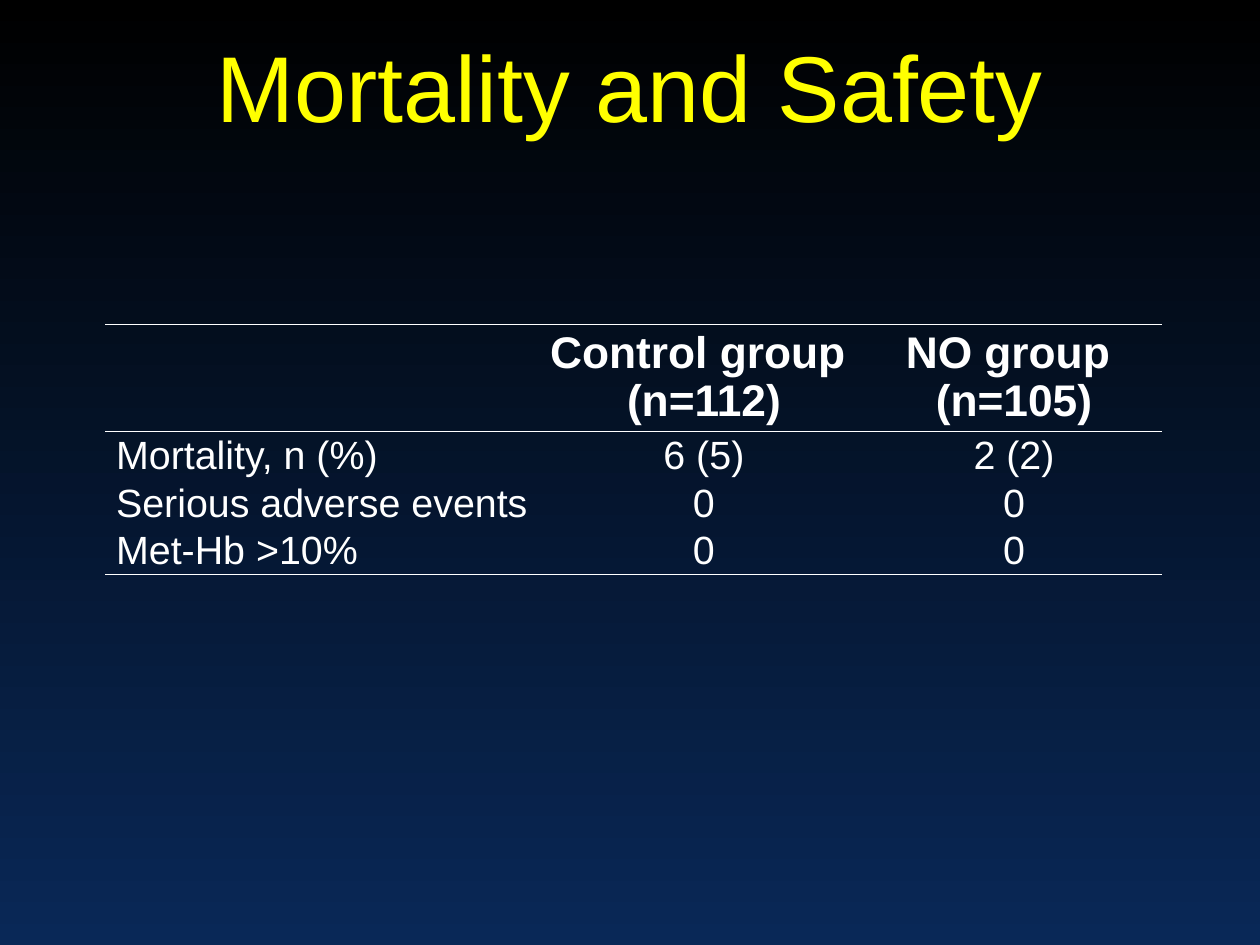
from dataclasses import dataclass

from lxml import etree
from pptx import Presentation
from pptx.dml.color import RGBColor as RGB
from pptx.enum.text import MSO_ANCHOR as ANCHOR, MSO_AUTO_SIZE as AUTO_SIZE, PP_ALIGN as ALIGN
from pptx.oxml.ns import qn
from pptx.util import Inches, Pt


@dataclass(frozen=True)
class Theme:
    """Colours, font and type sizes of the slide."""
    font: str = "Arial"
    top: str = "000000"
    bottom: str = "092857"
    title: str = "FFFF00"
    text: str = "FFFFFF"
    title_size: int = 76
    head_size: int = 36
    body_size: int = 32
    rule_width: int = 1
    line_spacing: float = 0.96


THEME = Theme()
COL_WIDTHS = [4.92, 3.67, 3.33]
HEAD_HEIGHT, ROW_HEIGHT = 1.21, 0.54
ROWS = [
    ["", "Control group \n(n=112)", "NO group \n(n=105)"],
    ["Mortality, n (%)", "6 (5)", "2 (2)"],
    ["Serious adverse events", "0", "0"],
    ["Met-Hb >10%", "0", "0"],
]


def format_text(tf, size, color, bold=False, align=ALIGN.CENTER, spacing=None):
    """Format every paragraph and run of a text frame."""
    for p in tf.paragraphs:
        p.alignment = align
        p.line_spacing = spacing
        for r in p.runs:
            r.font.name = THEME.font
            r.font.size = Pt(size)
            r.font.bold = bold
            r.font.color.rgb = RGB.from_string(color)


def set_background(s):
    """Fill the slide with a vertical gradient."""
    fill = s.background.fill
    fill.gradient()
    fill.gradient_angle = 270
    for stop, color in zip(fill.gradient_stops, (THEME.top, THEME.bottom)):
        stop.color.rgb = RGB.from_string(color)


def set_title(s, text):
    """Place and format the title placeholder."""
    sp = s.shapes.title
    sp.left, sp.top, sp.width, sp.height = Inches(0), Inches(0.21), Inches(14.22), Inches(1.62)
    tf = sp.text_frame
    tf.text = text
    tf.auto_size = AUTO_SIZE.NONE
    tf.vertical_anchor = ANCHOR.MIDDLE
    format_text(tf, THEME.title_size, THEME.title, spacing=THEME.line_spacing)


def set_borders(cell, ruled):
    """Draw the ruled sides of a cell and clear the others."""
    tc_pr = cell._tc.get_or_add_tcPr()
    for i, side in enumerate(("lnL", "lnR", "lnT", "lnB")):
        ln = etree.Element(qn(f"a:{side}"), w=str(Pt(THEME.rule_width)))
        if side in ruled:
            fill = etree.SubElement(ln, qn("a:solidFill"))
            etree.SubElement(fill, qn("a:srgbClr"), val=THEME.text)
        else:
            etree.SubElement(ln, qn("a:noFill"))
        tc_pr.insert(i, ln)


def fill_cell(cell, text, row, col):
    """Write one table cell with its margins, type and rules."""
    head, label = row == 0, col == 0
    cell.text = text
    cell.fill.background()
    cell.vertical_anchor = ANCHOR.MIDDLE
    cell.margin_left = Inches(0.12 if label else 0.01)
    cell.margin_top = cell.margin_right = Inches(0.01)
    cell.margin_bottom = Inches(0)
    format_text(
        cell.text_frame,
        THEME.head_size if head else THEME.body_size,
        THEME.text,
        bold=head,
        align=ALIGN.LEFT if label else ALIGN.CENTER,
        spacing=THEME.line_spacing if head else None,
    )
    ruled = {0: ("lnT", "lnB"), 1: ("lnT",), len(ROWS) - 1: ("lnB",)}
    set_borders(cell, ruled.get(row, ()))


def add_results_table(s):
    """Add the table of mortality and safety results."""
    heights = [HEAD_HEIGHT] + [ROW_HEIGHT] * (len(ROWS) - 1)
    frame = s.shapes.add_table(
        len(ROWS), len(COL_WIDTHS), Inches(1.19), Inches(3.66),
        Inches(sum(COL_WIDTHS)), Inches(sum(heights)),
    )
    table = frame.table
    table.horz_banding = False
    for column, width in zip(table.columns, COL_WIDTHS):
        column.width = Inches(width)
    for row, (texts, height) in enumerate(zip(ROWS, heights)):
        table.rows[row].height = Inches(height)
        for col, text in enumerate(texts):
            fill_cell(table.cell(row, col), text, row, col)


def main():
    """Build and save the slide."""
    prs = Presentation()
    prs.slide_width, prs.slide_height = Inches(14.22), Inches(10.67)
    s = prs.slides.add_slide(prs.slide_layouts[5])
    set_background(s)
    set_title(s, "Mortality and Safety")
    add_results_table(s)
    prs.save("out.pptx")


if __name__ == "__main__":
    main()
